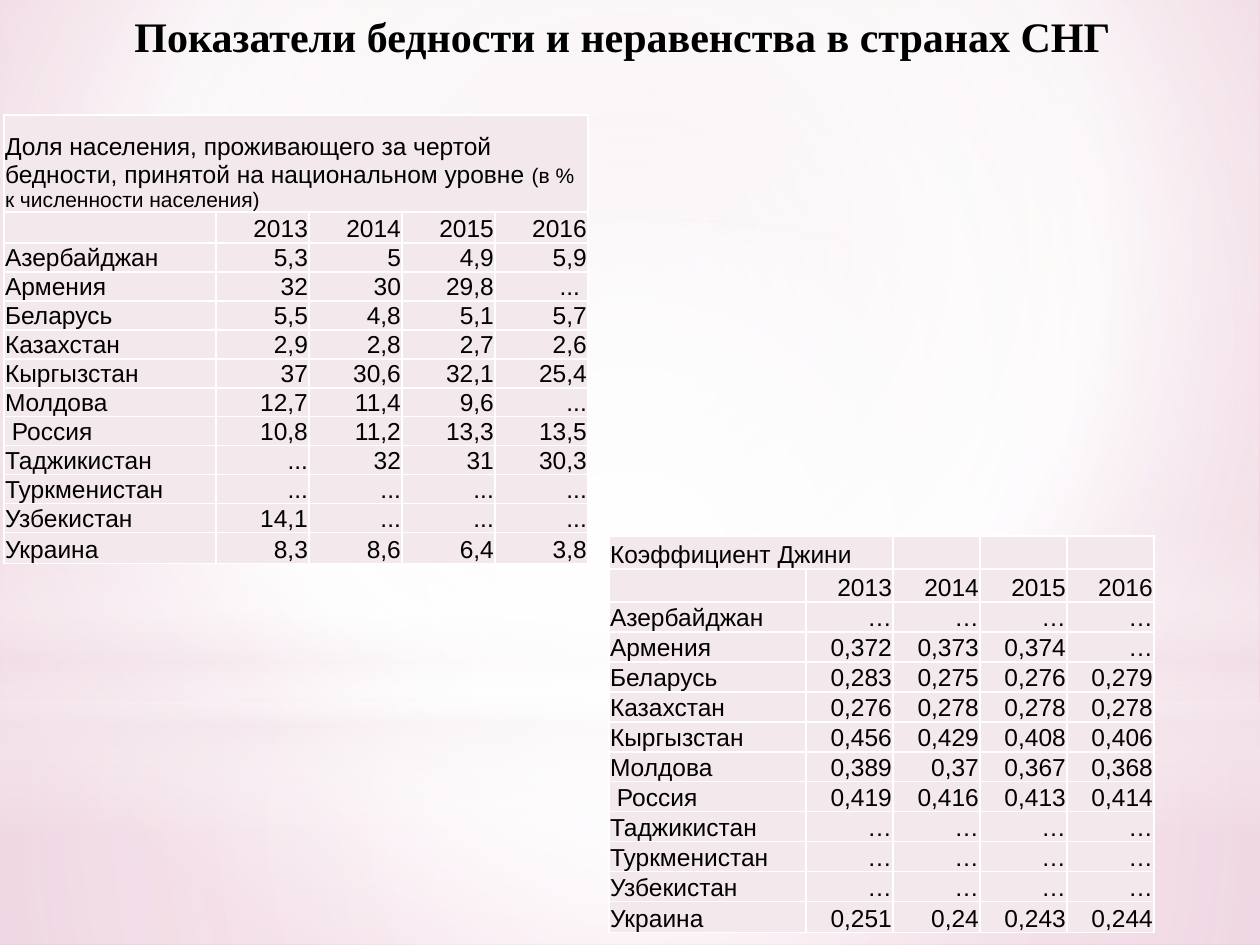
from dataclasses import dataclass
from typing import Any, NamedTuple, Optional

from lxml.etree import SubElement
from pptx import Presentation
from pptx.dml.color import RGBColor
from pptx.enum.shapes import MSO_SHAPE
from pptx.enum.text import MSO_ANCHOR, MSO_AUTO_SIZE, PP_ALIGN
from pptx.oxml.ns import qn
from pptx.util import Emu, Pt

EMU_PER_PX = 914400 / 126


@dataclass(frozen=True)
class Theme:
    ink: str = "000000"
    cell: str = "F3E8EB"
    border: str = "FFFFFF"
    border_width: int = 1
    title_font: str = "Times New Roman"
    table_font: str = "Arial"
    title_size: int = 24
    table_size: int = 14
    note_size: int = 12


class Stop(NamedTuple):
    position: int
    color: str
    opacity: int = 100


class Gradient(NamedTuple):
    stops: list[Stop]
    focus: Optional[tuple[int, int, int, int]] = (50, 50, 50, 50)  # None: top to bottom


class Backdrop(NamedTuple):
    kind: MSO_SHAPE
    box: tuple[int, int, int, int]
    gradient: Gradient


class Grid(NamedTuple):
    left: int
    top: int
    columns: list[int]
    rows: list[int]
    heading: list[tuple[str, int]]
    heading_span: int
    body: list[list[str]]


THEME = Theme()
YEARS = ["", "2013", "2014", "2015", "2016"]
COUNTRIES = ["Азербайджан", "Армения", "Беларусь", "Казахстан", "Кыргызстан", "Молдова",
             " Россия", "Таджикистан", "Туркменистан", "Узбекистан", "Украина"]
POVERTY = [
    ["5,3", "5", "4,9", "5,9"],
    ["32", "30", "29,8", "... "],
    ["5,5", "4,8", "5,1", "5,7"],
    ["2,9", "2,8", "2,7", "2,6"],
    ["37", "30,6", "32,1", "25,4"],
    ["12,7", "11,4", "9,6", "..."],
    ["10,8", "11,2", "13,3", "13,5"],
    ["...", "32", "31", "30,3"],
    ["..."] * 4,
    ["14,1", "...", "...", "..."],
    ["8,3", "8,6", "6,4", "3,8"],
]
GINI = [
    ["…"] * 4,
    ["0,372", "0,373", "0,374", "…"],
    ["0,283", "0,275", "0,276", "0,279"],
    ["0,276", "0,278", "0,278", "0,278"],
    ["0,456", "0,429", "0,408", "0,406"],
    ["0,389", "0,37", "0,367", "0,368"],
    ["0,419", "0,416", "0,413", "0,414"],
    ["…"] * 4,
    ["…"] * 4,
    ["…"] * 4,
    ["0,251", "0,24", "0,243", "0,244"],
]


def with_labels(values: list[list[str]]) -> list[list[str]]:
    return [YEARS] + [[country, *row] for country, row in zip(COUNTRIES, values)]


GRIDS = [
    Grid(4, 115, [212] + [93] * 4, [97, 31] + [29] * 10 + [31],
         [("Доля населения, проживающего за чертой бедности, принятой на национальном уровне ",
           THEME.table_size), ("(в % к численности населения)", THEME.note_size)],
         5, with_labels(POVERTY)),
    Grid(609, 536, [197] + [87] * 4, [33, 33] + [30] * 10 + [31],
         [("Коэффициент Джини", THEME.table_size)], 2, with_labels(GINI)),
]

PAGE_GRADIENT = Gradient([Stop(0, "EDDAE2"), Stop(60, "FFFFFF"), Stop(100, "E09DBC")],
                         (20, 10, 20, 60))
BACKDROPS = [
    Backdrop(MSO_SHAPE.RECTANGLE, (0, 703, 1260, 242), Gradient(
        [Stop(0, "FFFFFF", 91), Stop(37, "FFFFFF", 76), Stop(100, "F4E7ED", 79)])),
    Backdrop(MSO_SHAPE.RECTANGLE, (0, 0, 1260, 703), Gradient(
        [Stop(0, "FFFFFF", 89), Stop(48, "FFFFFF", 62), Stop(100, "F4E7ED", 79)])),
    Backdrop(MSO_SHAPE.RECTANGLE, (0, 519, 1260, 315), Gradient(
        [Stop(0, "FFFFFF", 0), Stop(29, "FFFFFF", 30), Stop(45, "F4E7ED", 40),
         Stop(55, "FFFFFF", 26), Stop(65, "F4E7ED", 60), Stop(100, "FFFFFF", 0)], None)),
    Backdrop(MSO_SHAPE.OVAL, (0, 220, 1260, 703), Gradient(
        [Stop(0, "FFFFFF"), Stop(56, "FFFFFF", 0)])),
]


def px(length: int) -> Emu:
    return Emu(round(length * EMU_PER_PX))


def apply(target: Any, values: dict[str, Any]) -> None:
    for name, value in values.items():
        setattr(target, name, value)


def add_span(para: Any, text: str, font: str, size: int, bold: bool = False) -> None:
    span = para.add_run()
    span.text = text
    apply(span.font, {"name": font, "size": Pt(size), "bold": bold})
    span.font.color.rgb = RGBColor.from_string(THEME.ink)


def set_gradient(fill: Any, properties: Any, gradient: Gradient) -> None:
    """Swap a solid fill inside the properties element for a gradient."""
    fill.solid()
    fill.fore_color.rgb = RGBColor.from_string(THEME.border)
    solid = properties.find(qn("a:solidFill"))
    element = SubElement(properties, qn("a:gradFill"), rotWithShape="1")
    properties.replace(solid, element)
    stops = SubElement(element, qn("a:gsLst"))
    for stop in gradient.stops:
        mark = SubElement(stops, qn("a:gs"), pos=str(stop.position * 1000))
        color = SubElement(mark, qn("a:srgbClr"), val=stop.color)
        if stop.opacity < 100:
            SubElement(color, qn("a:alpha"), val=str(stop.opacity * 1000))
    if gradient.focus is None:
        SubElement(element, qn("a:lin"), ang="5400000", scaled="0")
    else:
        shade = SubElement(element, qn("a:path"), {"path": "circle"})
        sides = {side: str(value * 1000) for side, value in zip("ltrb", gradient.focus)}
        SubElement(shade, qn("a:fillToRect"), sides)


def add_backdrop(page: Any, backdrop: Backdrop) -> None:
    shape = page.shapes.add_shape(backdrop.kind, *map(px, backdrop.box))
    shape.shadow.inherit = False
    set_gradient(shape.fill, shape.element.spPr, backdrop.gradient)
    shape.line.fill.background()


def format_cell(cell: Any) -> None:
    apply(cell, {"margin_left": px(1), "margin_right": px(1), "margin_top": px(1),
                 "margin_bottom": 0, "vertical_anchor": MSO_ANCHOR.BOTTOM})
    properties = cell._tc.get_or_add_tcPr()
    for side in ("a:lnL", "a:lnR", "a:lnT", "a:lnB"):
        line = SubElement(properties, qn(side), w=str(Pt(THEME.border_width)))
        SubElement(SubElement(line, qn("a:solidFill")), qn("a:srgbClr"), val=THEME.border)
    cell.fill.solid()
    cell.fill.fore_color.rgb = RGBColor.from_string(THEME.cell)


def add_grid(page: Any, grid: Grid) -> None:
    frame = page.shapes.add_table(len(grid.rows), len(grid.columns), px(grid.left), px(grid.top),
                                  px(sum(grid.columns)), px(sum(grid.rows)))
    table = frame.table
    apply(table, {"first_row": False, "horz_banding": False})
    for column, width in zip(table.columns, grid.columns):
        column.width = px(width)
    for row, height in zip(table.rows, grid.rows):
        row.height = px(height)
    table.cell(0, 0).merge(table.cell(0, grid.heading_span - 1))

    for row_index, texts in enumerate([[""] * len(grid.columns)] + grid.body):
        for column_index, text in enumerate(texts):
            cell = table.cell(row_index, column_index)
            format_cell(cell)
            para = cell.text_frame.paragraphs[0]
            para.alignment = PP_ALIGN.RIGHT if column_index else PP_ALIGN.LEFT
            if text:
                add_span(para, text, THEME.table_font, THEME.table_size)
            elif row_index or column_index:
                # Keeps empty cells from stretching their row
                SubElement(para._p, qn("a:endParaRPr"), sz=str(THEME.table_size * 100))
    for text, size in grid.heading:
        add_span(table.cell(0, 0).text_frame.paragraphs[0], text, THEME.table_font, size)


def place_title(page: Any, text: str) -> None:
    title = page.shapes.title
    apply(title, {"left": px(63), "top": px(0), "width": px(1113), "height": px(147)})
    apply(title.text_frame, {"word_wrap": True, "auto_size": MSO_AUTO_SIZE.NONE,
                             "vertical_anchor": MSO_ANCHOR.TOP, "margin_top": px(10)})
    para = title.text_frame.paragraphs[0]
    para.alignment = PP_ALIGN.CENTER
    para._p.get_or_add_pPr().set("marL", str(px(6)))
    add_span(para, text, THEME.title_font, THEME.title_size, bold=True)
    page.shapes.element.append(title.element)  # bring to front


def main() -> None:
    deck = Presentation()
    apply(deck, {"slide_width": px(1260), "slide_height": px(945)})
    page = deck.slides.add_slide(deck.slide_layouts[5])

    # Background and soft overlays
    fill = page.background.fill
    fill.solid()
    set_gradient(fill, page.element.find(".//" + qn("p:bgPr")), PAGE_GRADIENT)
    for backdrop in BACKDROPS:
        add_backdrop(page, backdrop)

    # Tables and title
    for grid in GRIDS:
        add_grid(page, grid)
    place_title(page, "Показатели бедности и неравенства в странах СНГ")
    deck.save("out.pptx")


if __name__ == "__main__":
    main()
